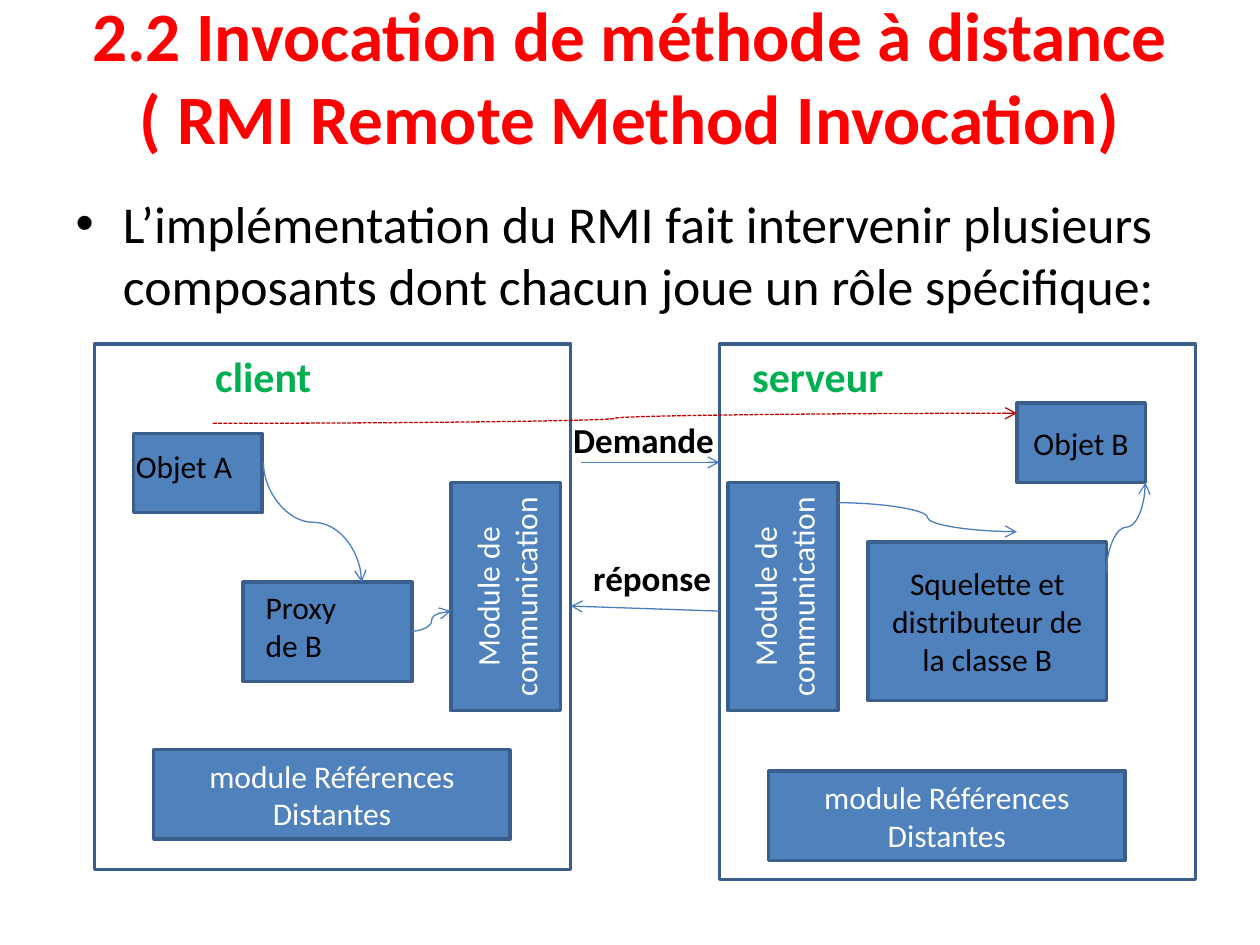
from lxml.etree import SubElement
from pptx import Presentation
from pptx.dml.color import RGBColor
from pptx.enum.dml import MSO_LINE
from pptx.enum.shapes import MSO_CONNECTOR, MSO_SHAPE
from pptx.enum.text import MSO_ANCHOR, MSO_AUTO_SIZE, PP_ALIGN
from pptx.oxml.ns import qn
from pptx.util import Pt

PX = 9144  # EMU in one px, 100 px to the inch
BLACK, WHITE, RED, GREEN = "000000", "FFFFFF", "FF0000", "00B050"
BLUE, EDGE, ARROW, CALL = "4F81BD", "3A5F8C", "4B7EBC", "C00000"


def color(value):
    return RGBColor.from_string(value)


def emu(*lengths):
    return [round(length * PX) for length in lengths]


def write(frame, text, size=18, fill=BLACK, bold=False,
          align=PP_ALIGN.LEFT, anchor=MSO_ANCHOR.TOP):
    frame.word_wrap = True
    frame.vertical_anchor = anchor
    frame.text = text
    paragraph = frame.paragraphs[0]
    paragraph.alignment = align
    paragraph.space_before = Pt(0)
    for run in paragraph.runs:
        run.font.name = "Calibri"
        run.font.size = Pt(size)
        run.font.bold = bold
        run.font.color.rgb = color(fill)


class Diagram:
    def __init__(self, slide):
        self.slide = slide

    def placeholder(self, holder, at, text, **style):
        holder.left, holder.top, holder.width, holder.height = emu(*at)
        holder.text_frame.auto_size = MSO_AUTO_SIZE.NONE
        write(holder.text_frame, text, **style)

    def box(self, at, text="", fill=BLUE, rotation=0, ink=WHITE):
        rect = self.slide.shapes.add_shape(MSO_SHAPE.RECTANGLE, *emu(*at))
        rect.shadow.inherit = False
        rect.rotation = rotation
        if fill:
            rect.fill.solid()
            rect.fill.fore_color.rgb = color(fill)
        else:
            rect.fill.background()
        rect.line.color.rgb = color(EDGE)
        rect.line.width = Pt(2)
        if text:
            write(rect.text_frame, text, fill=ink,
                  align=PP_ALIGN.CENTER, anchor=MSO_ANCHOR.MIDDLE)

    def label(self, at, text, **style):
        write(self.slide.shapes.add_textbox(*emu(*at)).text_frame, text, **style)

    def arrow(self, start, end, kind=MSO_CONNECTOR.STRAIGHT, turn=0,
              stroke=ARROW, dash=None):
        (x1, y1), (x2, y2) = start, end
        if turn:
            # Endpoints before the quarter turn about the centre
            side = 1 if turn == 90 else -1
            cx, cy = (x1 + x2) / 2, (y1 + y2) / 2
            dx, dy = side * (y1 - cy), side * (cx - x1)
            x1, y1, x2, y2 = cx + dx, cy + dy, cx - dx, cy - dy
        link = self.slide.shapes.add_connector(kind, *emu(x1, y1, x2, y2))
        link.line.color.rgb = color(stroke)
        link.line.width = Pt(0.75)
        if dash:
            link.line.dash_style = dash
        properties = link._element.spPr
        if turn:
            properties.find(qn("a:xfrm")).set("rot", str(turn * 60000))
        SubElement(properties.find(qn("a:ln")), qn("a:tailEnd"), type="arrow")
        SubElement(properties, qn("a:effectLst"))

    def curve(self, start, end, **style):
        self.arrow(start, end, kind=MSO_CONNECTOR.CURVE, **style)


def main():
    deck = Presentation()
    deck.slide_width, deck.slide_height = emu(1000, 750)
    slide = deck.slides.add_slide(deck.slide_layouts[1])
    rmi = Diagram(slide)

    # Title, raised above the middle of its box, and introduction
    title, intro = slide.placeholders
    rmi.placeholder(title, (50, 30, 900, 125),
                    "2.2 Invocation de méthode à distance\v"
                    "( RMI Remote Method Invocation)",
                    size=39.6, fill=RED, bold=True,
                    align=PP_ALIGN.CENTER, anchor=MSO_ANCHOR.MIDDLE)
    title.text_frame.margin_bottom, = emu(71)
    rmi.placeholder(intro, (50, 147, 900, 102),
                    "L’implémentation du RMI fait intervenir plusieurs "
                    "composants dont chacun joue un rôle spécifique:", size=29.6)

    # Client and server frames
    rmi.box((193, 462, 134, 79))
    rmi.box((106, 344, 102, 63))
    rmi.box((75, 273, 378, 417), fill=None)
    rmi.box((571, 273, 378, 425), fill=None)
    rmi.label((161, 273, 118, 50), "client", size=24, fill=GREEN, bold=True)
    rmi.label((587, 273, 205, 50), "serveur", size=24, fill=GREEN, bold=True)

    # Modules present on both sides
    for module_left, references_left, references_top in (
            (311, 122, 595), (531, 610, 612)):
        rmi.box((module_left, 430, 181, 87), "Module de communication",
                rotation=270)
        rmi.box((references_left, references_top, 283, 71),
                "module Références Distantes")

    # Client objects
    rmi.label((98, 350, 126, 40), "Objet A")
    rmi.label((201, 462, 102, 71), "Proxy de B")
    rmi.curve((209, 367), (287, 462), turn=270)
    rmi.curve((327, 501), (358, 485))

    # Messages between the two sides
    rmi.arrow((461, 367), (571, 367))
    rmi.arrow((571, 485), (453, 481))
    rmi.label((445, 327, 134, 44), "Demande", size=20, bold=True)
    rmi.label((461, 437, 118, 44), "réponse", size=20, bold=True)

    # Server objects
    rmi.box((689, 430, 189, 126), "Squelette et distributeur de la classe B",
            ink=BLACK)
    rmi.box((807, 320, 102, 63), "Objet B", ink=BLACK)
    rmi.curve((665, 399), (807, 422))
    rmi.curve((878, 454), (909, 383), turn=90)

    # Apparent call from object A to object B
    rmi.curve((169, 336), (807, 328), stroke=CALL, dash=MSO_LINE.SQUARE_DOT)

    deck.save("out.pptx")


if __name__ == "__main__":
    main()
